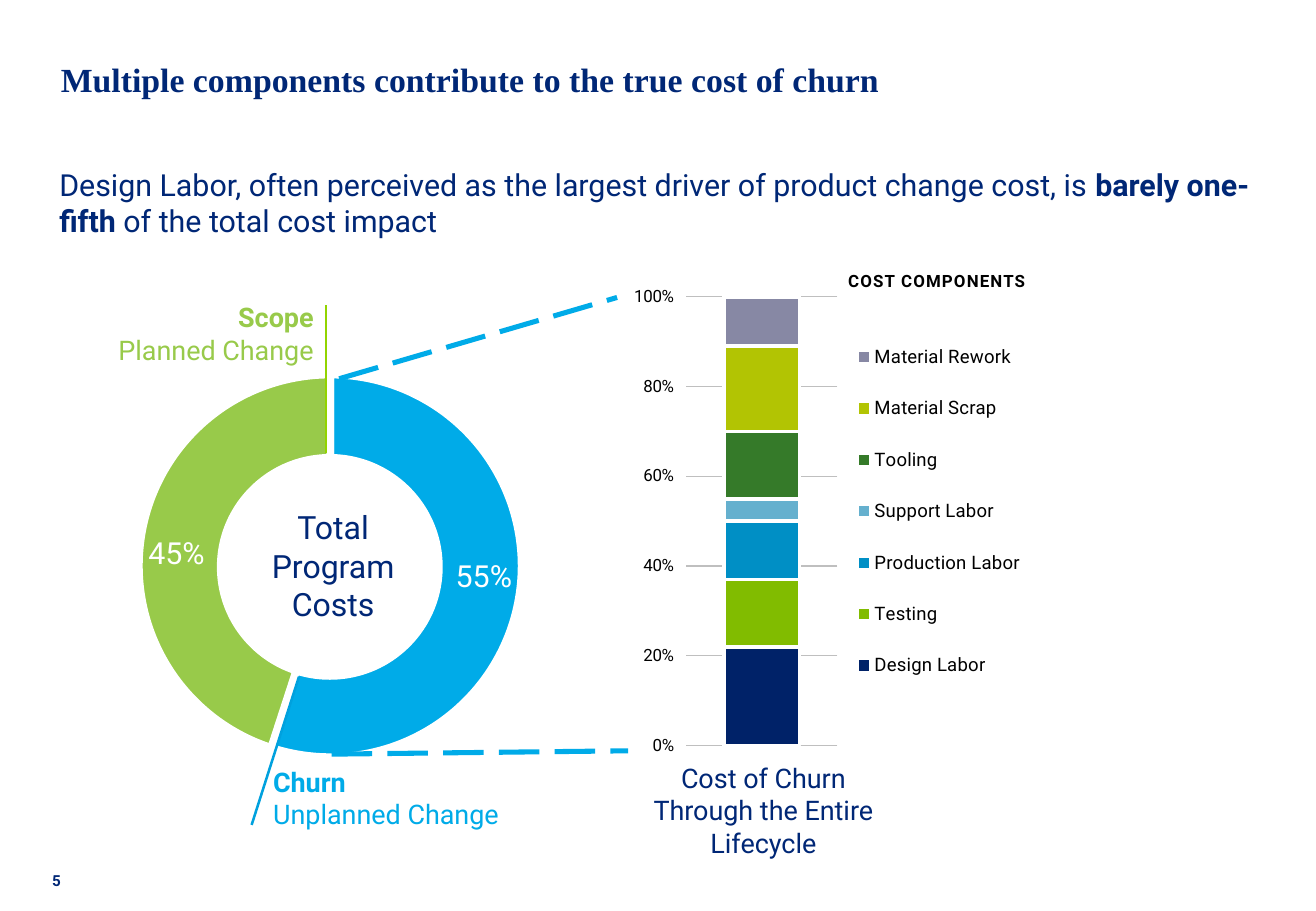
"""Builds the slide about the true cost of churn."""
from lxml import etree
from pptx import Presentation
from pptx.chart.data import CategoryChartData
from pptx.dml.color import RGBColor
from pptx.enum.chart import XL_CHART_TYPE, XL_LABEL_POSITION, XL_LEGEND_POSITION, XL_TICK_MARK
from pptx.enum.dml import MSO_LINE
from pptx.enum.shapes import MSO_CONNECTOR, MSO_SHAPE
from pptx.enum.text import MSO_ANCHOR, PP_ALIGN
from pptx.oxml.ns import qn
from pptx.util import Cm, Pt

PIE, STACKED = XL_CHART_TYPE.PIE, XL_CHART_TYPE.COLUMN_STACKED
LEFT, CENTER, RIGHT = PP_ALIGN.LEFT, PP_ALIGN.CENTER, PP_ALIGN.RIGHT
INSIDE_END = XL_LABEL_POSITION.INSIDE_END
LEGEND_RIGHT = XL_LEGEND_POSITION.RIGHT
TICK_OUTSIDE = XL_TICK_MARK.OUTSIDE
LONG_DASH = MSO_LINE.LONG_DASH
STRAIGHT, OVAL = MSO_CONNECTOR.STRAIGHT, MSO_SHAPE.OVAL
TOP, MIDDLE = MSO_ANCHOR.TOP, MSO_ANCHOR.MIDDLE

WHITE = RGBColor(0xFF, 0xFF, 0xFF)
BLACK = RGBColor(0x00, 0x00, 0x00)
NAVY = RGBColor(0x00, 0x27, 0x76)
SCOPE_GREEN = RGBColor(0x98, 0xCA, 0x4A)
SCOPE_LINE = RGBColor(0x92, 0xD4, 0x00)
CHURN_BLUE = RGBColor(0x00, 0xAB, 0xE8)
CHURN_LINE = RGBColor(0x00, 0xA1, 0xDE)
GRID_GRAY = RGBColor(0xBF, 0xBF, 0xBF)

COST_COMPONENTS = [
    ("Design Labor", 0.22, RGBColor(0x00, 0x22, 0x68)),
    ("Testing", 0.15, RGBColor(0x81, 0xBC, 0x00)),
    ("Production Labor", 0.13, RGBColor(0x00, 0x8F, 0xC5)),
    ("Support Labor", 0.05, RGBColor(0x65, 0xB0, 0xCE)),
    ("Tooling", 0.15, RGBColor(0x35, 0x7A, 0x29)),
    ("Material Scrap", 0.19, RGBColor(0xB2, 0xC4, 0x03)),
    ("Material Rework", 0.12, RGBColor(0x87, 0x88, 0xA4)),
]


def write_text(frame, lines, size, color, font="Roboto", align=LEFT, spacing=None,
               line_height=None):
    """Write lines, each a list of (text, bold) runs, into a text frame."""
    for index, line in enumerate(lines):
        paragraph = frame.add_paragraph() if index else frame.paragraphs[0]
        paragraph.alignment = align
        if line_height:
            paragraph.line_spacing = Pt(line_height)
        for text, bold in line:
            run = paragraph.add_run()
            run.text = text
            run.font.name, run.font.size, run.font.bold = font, Pt(size), bold
            run.font.color.rgb = color
            if spacing:
                run.font._element.set("spc", str(spacing))


def set_layout(parent, index, box, inner=False):
    """Give a plot area or legend a manual layout in chart fractions."""
    for layout in parent.findall(qn("c:layout")):
        parent.remove(layout)
    layout = etree.Element(qn("c:layout"))
    manual = etree.SubElement(layout, qn("c:manualLayout"))
    settings = [("layoutTarget", "inner")] if inner else []
    settings += [("xMode", "edge"), ("yMode", "edge"), *zip("xywh", box)]
    for name, value in settings:
        etree.SubElement(manual, qn(f"c:{name}")).set("val", str(value))
    parent.insert(index, layout)


def paint(part, fill, line, width):
    """Set the fill and outline of a shape or chart part."""
    part.fill.solid()
    part.fill.fore_color.rgb = fill
    part.line.color.rgb = line
    part.line.width = Pt(width)


class ChurnSlide:
    """Holds the slide and adds elements in its style, with lengths in centimetres."""

    def __init__(self, presentation):
        self.slide = presentation.slides.add_slide(presentation.slide_layouts[5])
        self.shapes = self.slide.shapes

    def frame(self, shape, anchor, margins):
        """Prepare and return the text frame of a shape."""
        frame = shape.text_frame
        frame.vertical_anchor = anchor
        if not margins:
            frame.margin_left = frame.margin_right = 0
            frame.margin_top = frame.margin_bottom = 0
        return frame

    def title(self, text, box):
        """Place and fill the title placeholder."""
        title = self.shapes.title
        title.left, title.top, title.width, title.height = map(Cm, box)
        write_text(self.frame(title, MIDDLE, False), [[(text, True)]], 20, NAVY,
                   font="Times New Roman")

    def text(self, lines, box, size, color, wrap=True, margins=True, **style):
        """Add a text box."""
        frame = self.frame(self.shapes.add_textbox(*map(Cm, box)), TOP, margins)
        frame.word_wrap = wrap
        write_text(frame, lines, size, color, **style)

    def line(self, ends, color, width, dash=None):
        """Add a straight line."""
        connector = self.shapes.add_connector(STRAIGHT, *map(Cm, ends))
        connector.line.color.rgb = color
        connector.line.width = Pt(width)
        if dash:
            connector.line.dash_style = dash
        etree.SubElement(connector._element.spPr, qn("a:effectLst"))

    def hole(self, box):
        """Add the white centre of the ring."""
        shape = self.shapes.add_shape(OVAL, *map(Cm, box))
        shape.shadow.inherit = False
        paint(shape, WHITE, WHITE, 2)

    def chart(self, kind, box, categories, series, plot_box):
        """Add a chart and return it."""
        data = CategoryChartData()
        data.categories = categories
        for name, values in series:
            data.add_series(name, values)
        chart = self.shapes.add_chart(kind, *map(Cm, box), data).chart
        chart.has_title = chart.has_legend = False
        chart.font.name, chart.font.size = "Roboto", Pt(18)
        chart.font.color.rgb = BLACK
        set_layout(chart._chartSpace.chart.plotArea, 0, plot_box, inner=True)
        return chart

    def program_costs(self, box):
        """Add the pie of churn and scope."""
        chart = self.chart(PIE, box, ["1", "2"], [("Series 1", [55, 45])],
                           (0.05, 0.05, 0.9, 0.9))
        plot = chart.plots[0]
        plot.vary_by_categories = True
        for index, color in enumerate([CHURN_BLUE, SCOPE_GREEN]):
            paint(plot.series[0].points[index].format, color, WHITE, 4.5)
        plot.has_data_labels = True
        labels = plot.data_labels
        labels.show_percentage, labels.show_value = True, False
        labels.number_format, labels.number_format_is_linked = "0%", False
        labels.position = INSIDE_END
        labels.font.name, labels.font.size = "Roboto", Pt(18)
        labels.font.color.rgb = WHITE

    def cost_components(self, box):
        """Add the stacked column of cost components."""
        chart = self.chart(STACKED, box, ["1"],
                           [(name, [share]) for name, share, _ in COST_COMPONENTS],
                           (0.145, 0.038, 0.32, 0.924))
        plot = chart.plots[0]
        plot.vary_by_categories = False
        plot.gap_width, plot.overlap = 100, 100
        for series, (_, _, color) in zip(plot.series, COST_COMPONENTS):
            paint(series.format, color, WHITE, 2.25)
        chart.category_axis.visible = False
        axis = chart.value_axis
        axis.minimum_scale, axis.maximum_scale, axis.major_unit = 0, 1, 0.2
        axis.major_tick_mark = TICK_OUTSIDE
        axis.format.line.fill.background()
        axis.major_gridlines.format.line.color.rgb = GRID_GRAY
        axis.major_gridlines.format.line.width = Pt(0.75)
        axis.tick_labels.number_format = "0%"
        axis.tick_labels.number_format_is_linked = False
        axis.tick_labels.font.size = Pt(10)
        chart.has_legend = True
        legend = chart.legend
        legend.position, legend.include_in_layout = LEGEND_RIGHT, False
        legend.font.size = Pt(11)
        set_layout(legend._element, 1, (0.48, 0.08, 0.4, 0.8))


def main():
    """Build and save the presentation."""
    presentation = Presentation()
    presentation.slide_width, presentation.slide_height = Cm(27.51), Cm(19.05)
    slide = ChurnSlide(presentation)
    slide.title("Multiple components contribute to the true cost of churn",
                (1.27, 1.19, 24.97, 0.94))
    slide.program_costs((2.46, 7.39, 8.89, 8.89))
    slide.hole((4.57, 9.53, 4.65, 4.65))
    slide.line((6.81, 9.47, 6.81, 6.38), SCOPE_LINE, 1.5)
    slide.line((5.26, 17.25, 6.25, 14.15), CHURN_LINE, 1.5)
    slide.text([[("Scope", True)], [("Planned Change", False)]],
               (2.21, 6.17, 4.6, 1.63), 16, SCOPE_GREEN, wrap=False, align=RIGHT)
    slide.text([[("Churn", True)], [("Unplanned Change", False)]],
               (5.46, 15.88, 5.33, 1.63), 16, CHURN_BLUE, wrap=False)
    slide.text([[("Total Program Costs", False)]],
               (5.11, 10.49, 3.71, 2.69), 19, NAVY, align=CENTER)
    slide.cost_components((12.9, 5.82, 9.91, 10.16))
    slide.line((7.09, 7.92, 12.9, 6.22), CHURN_BLUE, 3, LONG_DASH)
    slide.line((6.93, 15.77, 13.13, 15.7), CHURN_BLUE, 3, LONG_DASH)
    slide.text([[("Cost of Churn Through the Entire Lifecycle", False)]],
               (12.9, 15.8, 6.12, 2.31), 16, NAVY, align=CENTER)
    slide.text([[("COST COMPONENTS", True)]],
               (17.48, 5.54, 4.37, 0.69), 10, BLACK, wrap=False, spacing=70)
    slide.text([[("Design Labor, often perceived as the largest driver of product "
                  "change cost, is ", False),
                 ("barely one-fifth", True), (" of the total cost impact", False)]],
               (0.99, 3.35, 25.83, 1.8), 18, NAVY)
    slide.text([[("5", True)]], (1.09, 18.21, 0.51, 0.41), 9, NAVY,
               margins=False, line_height=11.2)
    presentation.save("out.pptx")


if __name__ == "__main__":
    main()
